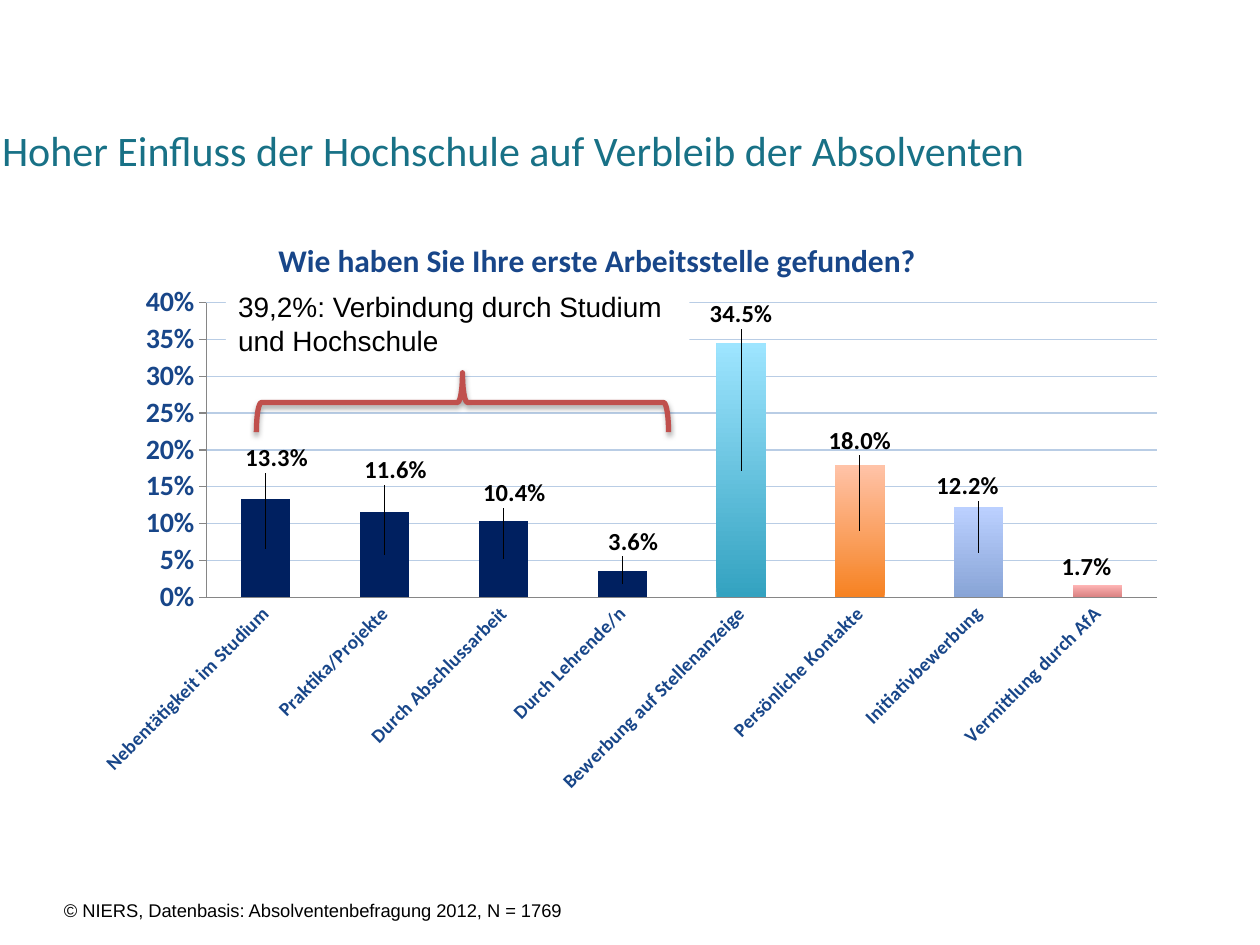
import pptx
import pptx.chart.data
import pptx.dml.color
import pptx.enum.chart
import pptx.enum.shapes
import pptx.enum.text
import pptx.oxml
import pptx.oxml.ns
import pptx.util

Pt = pptx.util.Pt
RGBColor = pptx.dml.color.RGBColor

WHITE = RGBColor(0xFF, 0xFF, 0xFF)
BLACK = RGBColor(0, 0, 0)
TEAL = RGBColor(0x18, 0x71, 0x86)
BLUE = RGBColor(0x18, 0x46, 0x89)
NAVY = RGBColor(0x00, 0x20, 0x60)
RED = RGBColor(0xC0, 0x50, 0x4D)
GRID_BLUE = RGBColor(0xB9, 0xCD, 0xE5)
AXIS_GRAY = RGBColor(0x86, 0x86, 0x86)
AQUA = (RGBColor(0x33, 0xA2, 0xC0), RGBColor(0x9E, 0xE5, 0xFF))
ORANGE = (RGBColor(0xF6, 0x82, 0x22), RGBColor(0xFF, 0xC3, 0xA8))
PERIWINKLE = (RGBColor(0x88, 0xA4, 0xD6), RGBColor(0xBB, 0xD0, 0xFF))
ROSE = (RGBColor(0xD9, 0x82, 0x82), RGBColor(0xFF, 0xB5, 0xB5))

# name, share, (bottom colour, top colour), label offset as a share of the chart
ANSWERS = [
    ("Nebentätigkeit im Studium", 0.133, (NAVY, NAVY), (0.01, -0.15)),
    ("Praktika/Projekte", 0.116, (NAVY, NAVY), (0.01, -0.14)),
    ("Durch Abschlussarbeit", 0.104, (NAVY, NAVY), (0.01, -0.11)),
    ("Durch Lehrende/n", 0.036, (NAVY, NAVY), (0.01, -0.07)),
    ("Bewerbung auf Stellenanzeige", 0.345, AQUA, (0, -0.26)),
    ("Persönliche Kontakte", 0.18, ORANGE, (0, -0.15)),
    ("Initiativbewerbung", 0.122, PERIWINKLE, (-0.01, -0.11)),
    ("Vermittlung durch AfA", 0.017, ROSE, (-0.01, -0.04)),
]


def set_font(font, size, color, name="Calibri", bold=False):
    """Format a font."""
    font.size = Pt(size)
    font.name = name
    font.bold = bold
    font.color.rgb = color


def place(shape, box):
    """Move a shape to a box of left, top, width and height in points."""
    shape.left, shape.top, shape.width, shape.height = (Pt(length) for length in box)


def set_layout(element, index, **settings):
    """Give a chart element a manual layout as its child at the index."""
    for old_layout in element.findall(pptx.oxml.ns.qn("c:layout")):
        element.remove(old_layout)
    children = "".join(f'<c:{key} val="{value}"/>' for key, value in settings.items())
    element.insert(index, pptx.oxml.parse_xml(
        f'<c:layout {pptx.oxml.ns.nsdecls("c")}><c:manualLayout>{children}'
        "</c:manualLayout></c:layout>"))


def add_title(slide, box):
    """Fill and place the title placeholder."""
    title = slide.shapes.title
    place(title, box)
    frame = title.text_frame
    frame.text = "Hoher Einfluss der Hochschule auf Verbleib der Absolventen"
    frame.vertical_anchor = pptx.enum.text.MSO_ANCHOR.TOP
    paragraph = frame.paragraphs[0]
    paragraph.alignment = pptx.enum.text.PP_ALIGN.LEFT
    set_font(paragraph.runs[0].font, 24, TEAL)


def format_axes(chart):
    """Format the category and value axes."""
    ticks = pptx.enum.chart.XL_TICK_MARK
    for axis, size, tick in ((chart.category_axis, 11, ticks.NONE),
                             (chart.value_axis, 16, ticks.OUTSIDE)):
        set_font(axis.tick_labels.font, size, BLUE, bold=True)
        axis.major_tick_mark = tick
        axis.minor_tick_mark = ticks.NONE
        axis.format.line.color.rgb = AXIS_GRAY
    body = chart.category_axis._element.find(".//" + pptx.oxml.ns.qn("a:bodyPr"))
    body.set("rot", "-2700000")
    body.set("vert", "horz")
    value_axis = chart.value_axis
    value_axis.minimum_scale, value_axis.maximum_scale = 0, 0.4
    value_axis.major_unit = 0.05
    value_axis.tick_labels.number_format = "0%"
    value_axis.tick_labels.number_format_is_linked = False
    grid_line = value_axis.major_gridlines.format.line
    grid_line.color.rgb = GRID_BLUE
    grid_line.width = Pt(0.75)


def format_columns(plot):
    """Colour the columns and set their labels above them."""
    plot.gap_width, plot.overlap = 140, 100
    plot.vary_by_categories = False
    series = plot.series[0]
    labels = series.data_labels
    labels.show_value = True
    labels.number_format = "0.0%"
    labels.number_format_is_linked = False
    set_font(labels.font, 14, BLACK, bold=True)
    for index, (_, _, colors, (shift_x, shift_y)) in enumerate(ANSWERS):
        point = series.points[index]
        fill = point.format.fill
        if colors[0] == colors[1]:
            fill.solid()
            fill.fore_color.rgb = colors[0]
        else:
            fill.gradient()
            fill.gradient_angle = 90
            for stop, color in zip(fill.gradient_stops, colors):
                stop.color.rgb = color
        set_font(point.data_label.font, 14, BLACK, bold=True)
    for label, answer in zip(series._element.iter(pptx.oxml.ns.qn("c:dLbl")), ANSWERS):
        set_layout(label, 1, x=answer[3][0], y=answer[3][1])


def add_answer_chart(slide, box):
    """Add the column chart of answers."""
    data = pptx.chart.data.CategoryChartData(number_format="0.0%")
    data.categories = [answer[0] for answer in ANSWERS]
    data.add_series("Series 1", [answer[1] for answer in ANSWERS])
    chart = slide.shapes.add_chart(
        pptx.enum.chart.XL_CHART_TYPE.COLUMN_STACKED,
        *(Pt(length) for length in box), data).chart
    set_font(chart.font, 10, BLACK)
    chart.has_legend = False
    chart.has_title = True
    frame = chart.chart_title.text_frame
    frame.text = "Wie haben Sie Ihre erste Arbeitsstelle gefunden?"
    set_font(frame.paragraphs[0].runs[0].font, 18, BLUE, bold=True)
    set_layout(chart.chart_title._element, 1, xMode="edge", yMode="edge", x=0.2, y=0.03)
    plot_area = chart._chartSpace.find(".//" + pptx.oxml.ns.qn("c:plotArea"))
    set_layout(plot_area, 0, layoutTarget="inner", xMode="edge", yMode="edge",
               x=0.14, y=0.147, w=0.86, h=0.49)
    format_axes(chart)
    format_columns(chart.plots[0])


def add_brace(slide, box):
    """Add a brace that opens downwards and fills the box."""
    left, top, width, height = box
    brace = slide.shapes.add_shape(pptx.enum.shapes.MSO_SHAPE.LEFT_BRACE, 0, 0, 0, 0)
    place(brace, (left + (width - height) / 2, top + (height - width) / 2, height, width))
    brace.rotation = 90
    brace.fill.background()
    brace.line.color.rgb = RED
    brace.line.width = Pt(3)
    brace.shadow.inherit = False
    effects = brace._element.spPr.find(pptx.oxml.ns.qn("a:effectLst"))
    effects.append(pptx.oxml.parse_xml(
        f'<a:outerShdw {pptx.oxml.ns.nsdecls("a")} blurRad="{Pt(3.1)}" dist="{Pt(1.8)}" '
        'dir="5400000" rotWithShape="0"><a:srgbClr val="000000">'
        '<a:alpha val="35000"/></a:srgbClr></a:outerShdw>'))


def add_text(slide, box, text, size, fill=None):
    """Add a wrapped text box, filled if a colour is given."""
    shape = slide.shapes.add_textbox(*(Pt(length) for length in box))
    if fill is not None:
        shape.fill.solid()
        shape.fill.fore_color.rgb = fill
    shape.text_frame.word_wrap = True
    shape.text_frame.text = text
    set_font(shape.text_frame.paragraphs[0].runs[0].font, size, BLACK, "Arial")


def main():
    """Build and save the slide."""
    presentation = pptx.Presentation()
    presentation.slide_width, presentation.slide_height = Pt(720), Pt(540)
    slide = presentation.slides.add_slide(presentation.slide_layouts[5])
    add_title(slide, (-6, 67.5, 690, 90))
    add_answer_chart(slide, (29.5, 122.5, 632, 343.5))
    add_brace(slide, (146.5, 213, 235.5, 34))
    add_text(slide, (129, 162, 265, 46),
             "39,2%: Verbindung durch Studium und Hochschule", 16, WHITE)
    add_text(slide, (29.5, 510, 471, 32),
             "© NIERS, Datenbasis: Absolventenbefragung 2012, N = 1769", 10.5)
    presentation.save("out.pptx")


if __name__ == "__main__":
    main()
